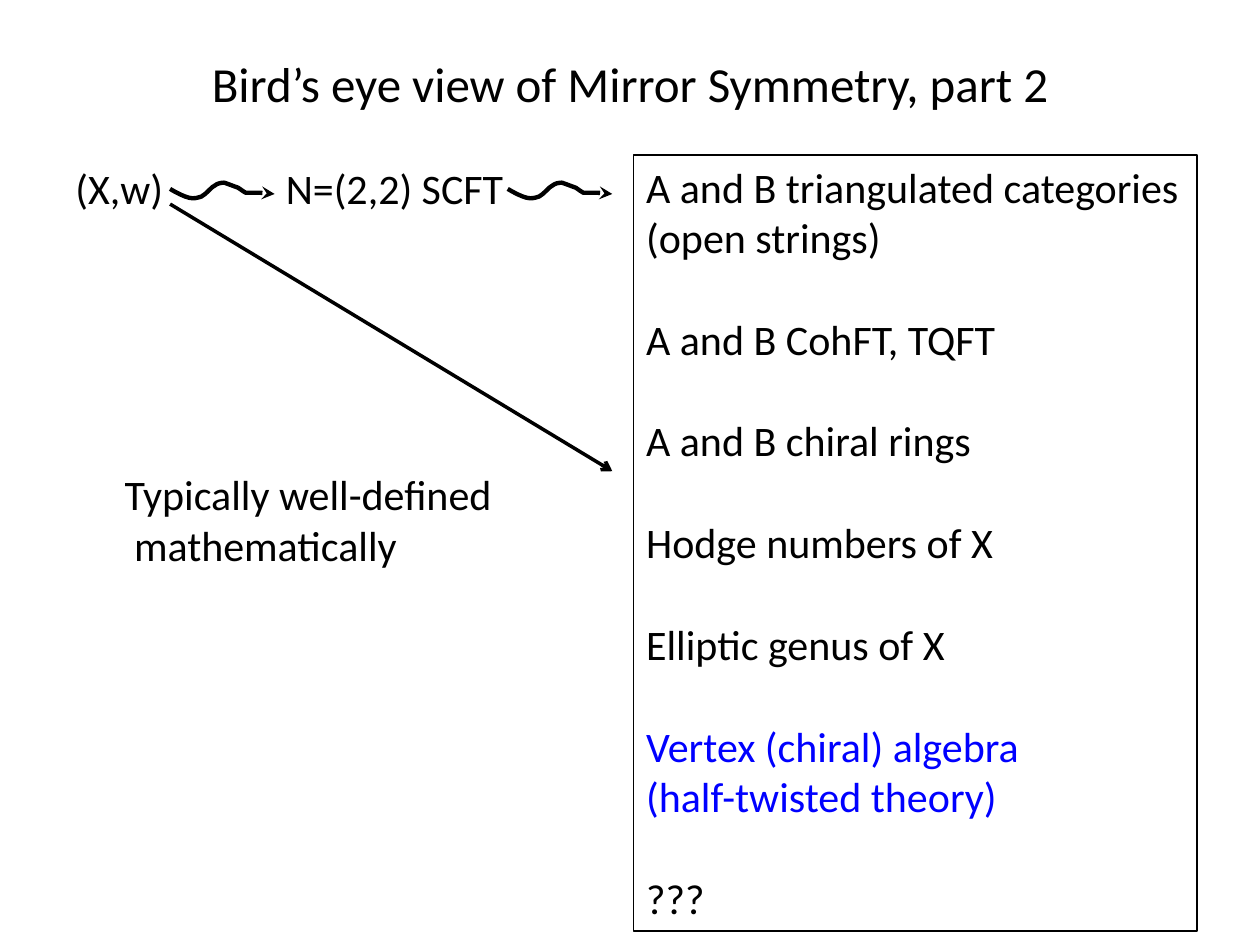
from lxml.etree import SubElement
from pptx import Presentation
from pptx.dml.color import RGBColor
from pptx.enum.shapes import MSO_CONNECTOR as Connector, MSO_SHAPE as Shape
from pptx.enum.text import MSO_ANCHOR as Anchor, PP_ALIGN as Align
from pptx.oxml.ns import qn
from pptx.util import Inches, Pt

BLACK, BLUE = "000000", "0000FF"
LINE_HEIGHT = 29.3
TOPICS = [
    (["A and B triangulated categories", "(open strings)"], BLACK),
    (["A and B CohFT, TQFT"], BLACK),
    (["A and B chiral rings"], BLACK),
    (["Hodge numbers of X"], BLACK),
    (["Elliptic genus of X"], BLACK),
    (["Vertex (chiral) algebra", "(half-twisted theory)"], BLUE),
    (["???"], BLACK),
]
WAVE = [
    (5, 3), (11, 6), (15, 7), (19, 8), (22, 7), (25, 6),
    (27, 5), (29, 3), (31, 1), (33, -1), (34, -2), (36, -3),
    (37, -4), (40, -5), (43, -5), (46, -4), (51, -2), (54, -1),
    (57, 1), (58, 2), (60, 3), (63, 3), (71, 3), (71, 3), (83, 4),
]


def color(value):
    """Return a colour from its hex string."""
    return RGBColor.from_string(value)


def box(left, top, width, height):
    """Return a frame given in inches as slide lengths."""
    return [Inches(value) for value in (left, top, width, height)]


def fill_text(frame, groups, size=24, align=Align.LEFT, anchor=Anchor.TOP, wrap=True):
    """Write groups of lines, one line height apart, into a text frame."""
    formats = {"word_wrap": wrap, "vertical_anchor": anchor}
    for name, value in formats.items():
        setattr(frame, name, value)
    paragraph = None
    for lines, tint in groups:
        for index, line in enumerate(lines):
            gap = Pt(LINE_HEIGHT) if paragraph is not None and index == 0 else Pt(0)
            paragraph = frame.paragraphs[0] if paragraph is None else frame.add_paragraph()
            for name, value in {"alignment": align, "space_before": gap}.items():
                setattr(paragraph, name, value)
            run = paragraph.add_run()
            run.text = line
            for name, value in {"name": "Calibri", "size": Pt(size)}.items():
                setattr(run.font, name, value)
            run.font.color.rgb = color(tint)


def add_text(slide, frame, lines, **formats):
    """Add a black text box and return its text frame."""
    text_frame = slide.shapes.add_textbox(*box(*frame)).text_frame
    fill_text(text_frame, [(lines, BLACK)], **formats)
    return text_frame


def style_arrow(shape, width, head):
    """Give a line its colour, width and arrowhead, without a shadow."""
    shape.line.color.rgb = color(BLACK)
    shape.line.width = Pt(width)
    SubElement(shape.line._get_or_add_ln(), qn("a:tailEnd"), type=head)
    SubElement(shape._element.spPr, qn("a:effectLst"))


def add_wavy_arrow(slide, left, top):
    """Add a wavy arrow of Bézier curves ending in a straight stroke."""
    builder = slide.shapes.build_freeform(0, 0, scale=Inches(0.01))
    builder.add_line_segments(WAVE, close=False)
    shape = builder.convert_to_shape(Inches(left), Inches(top))
    shape.fill.background()
    path = next(shape._element.iter(qn("a:path")))
    segments = path.findall(qn("a:lnTo"))
    for start in range(0, len(segments) - 1, 3):
        curve = path.makeelement(qn("a:cubicBezTo"))
        segments[start].addprevious(curve)
        for segment in segments[start:start + 3]:
            curve.append(segment[0])
            path.remove(segment)
    style_arrow(shape, 2.5, "stealth")


def add_straight_arrow(slide, start, end):
    """Add a straight arrow between two points."""
    points = [Inches(value) for value in (*start, *end)]
    style_arrow(slide.shapes.add_connector(Connector.STRAIGHT, *points), 2, "arrow")


def add_topic_box(slide, frame):
    """Add the outlined box that lists the topics."""
    shape = slide.shapes.add_shape(Shape.RECTANGLE, *box(*frame))
    shape.shadow.inherit = False
    shape.fill.background()
    shape.line.color.rgb = color(BLACK)
    shape.line.width = Pt(0.75)
    fill_text(shape.text_frame, TOPICS)


def add_tab_stop(paragraph, position):
    """Set a left tab stop at a distance in inches."""
    stops = SubElement(paragraph._p.get_or_add_pPr(), qn("a:tabLst"))
    SubElement(stops, qn("a:tab"), pos=str(Inches(position)), algn="l")


def main():
    """Build the slide and save it."""
    presentation = Presentation()
    presentation.slide_width, presentation.slide_height = Inches(10), Inches(7.5)
    slide = presentation.slides.add_slide(presentation.slide_layouts[6])
    add_text(slide, (0.5, 0.3, 9, 0.71), ["Bird’s eye view of Mirror Symmetry, part 2"],
             size=28, align=Align.CENTER, anchor=Anchor.MIDDLE)
    chain = add_text(slide, (0.5, 1.24, 9, 1.67), ["(X,w)\tN=(2,2) SCFT"])
    add_tab_stop(chain.paragraphs[0], 1.67)
    add_topic_box(slide, (5.03, 1.23, 4.47, 6.16))
    for left in (1.35, 4.03):
        add_wavy_arrow(slide, left, 1.5)
    add_text(slide, (0.89, 3.67, 3.14, 0.91),
             ["Typically well-defined", " mathematically"], wrap=False)
    add_straight_arrow(slide, (1.35, 1.62), (4.86, 3.74))
    presentation.save("out.pptx")


if __name__ == "__main__":
    main()
